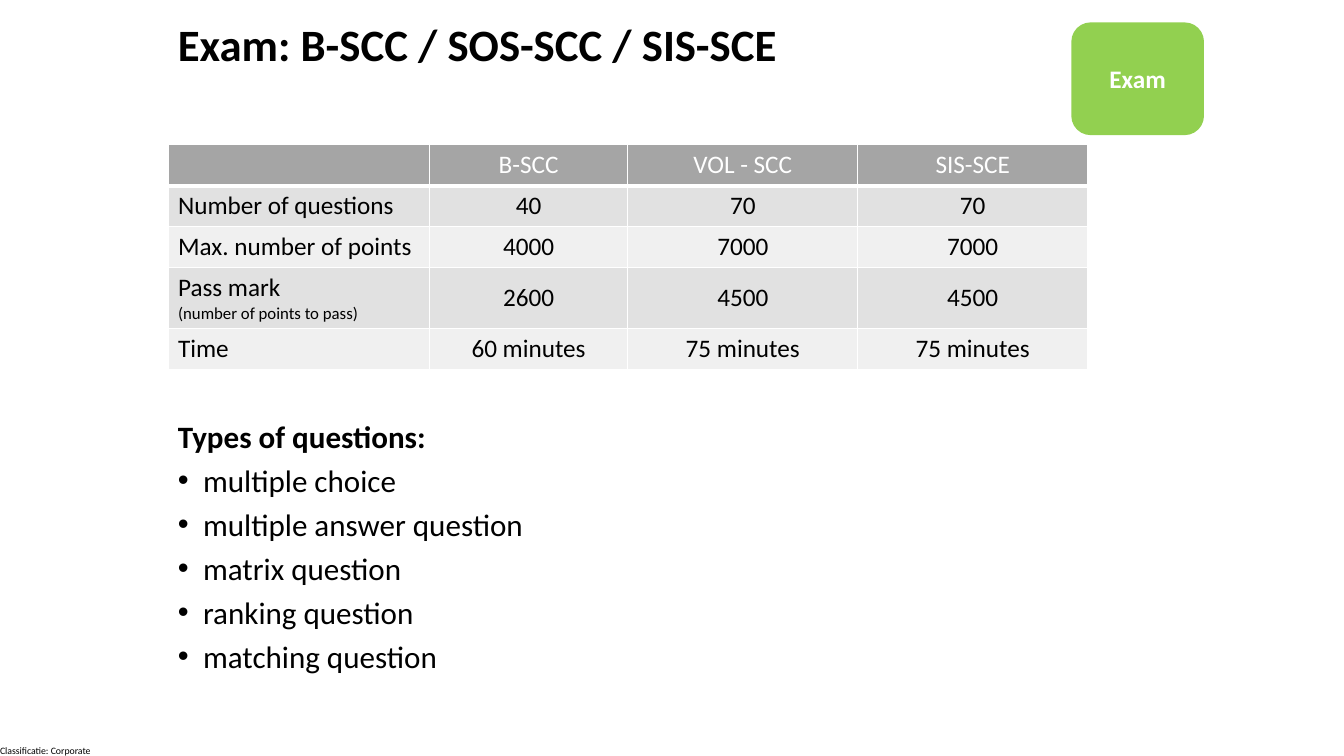
import dataclasses

import lxml.etree
import pptx
import pptx.dml.color
import pptx.enum.shapes
import pptx.enum.text
import pptx.oxml.ns
import pptx.util

ALIGN = pptx.enum.text.PP_ALIGN
ANCHOR = pptx.enum.text.MSO_ANCHOR


@dataclasses.dataclass(frozen=True)
class Theme:
    font: str = "Calibri"
    black: str = "000000"
    white: str = "FFFFFF"
    green: str = "92D050"
    header: str = "A5A5A5"
    bands: tuple = ("E1E1E1", "F0F0F0")
    title_size: float = 32
    list_size: float = 22.2
    table_size: float = 18
    note_size: float = 12
    footer_size: float = 7


THEME = Theme()
EXAM_ROWS = [
    ("", "B-SCC", "VOL - SCC", "SIS-SCE"),
    ("Number of questions", "40", "70", "70"),
    ("Max. number of points", "4000", "7000", "7000"),
    ("Pass mark\n(number of points to pass)", "2600", "4500", "4500"),
    ("Time", "60 minutes", "75 minutes", "75 minutes"),
]
COLUMN_WIDTHS = [249, 189, 219, 219]
ROW_HEIGHTS = [39, 39, 39, 58, 39]
QUESTION_TYPES = [
    "multiple choice",
    "multiple answer question",
    "matrix question",
    "ranking question",
    "matching question",
]


def px(length):
    return pptx.util.Emu(length * 9525)


def rgb(color):
    return pptx.dml.color.RGBColor.from_string(color)


def add_element(parent, tag, **attributes):
    element = lxml.etree.SubElement(parent, pptx.oxml.ns.qn(tag))
    for name, value in attributes.items():
        element.set(name, str(value))
    return element


def write_text(paragraph, text, size, color=THEME.black, bold=False,
               align=ALIGN.LEFT, line_spacing=None, space_before=0, bullet=False):
    if bullet:
        properties = paragraph._p.get_or_add_pPr()
        properties.set("marL", str(px(24)))
        properties.set("indent", str(px(-24)))
        add_element(properties, "a:buFont", typeface="Arial")
        add_element(properties, "a:buChar", char="•")
    paragraph.alignment = align
    paragraph.space_before = pptx.util.Pt(space_before)
    if line_spacing:
        paragraph.line_spacing = line_spacing
    run = paragraph.add_run()
    run.text = text
    run.font.name = THEME.font
    run.font.size = pptx.util.Pt(size)
    run.font.bold = bold
    run.font.color.rgb = rgb(color)


def add_text_frame(slide, left, top, width, height):
    frame = slide.shapes.add_textbox(px(left), px(top), px(width), px(height)).text_frame
    frame.word_wrap = True
    return frame


def add_title(slide, left, top, width, height):
    frame = add_text_frame(slide, left, top, width, height)
    write_text(frame.paragraphs[0], "Exam: B-SCC / SOS-SCC / SIS-SCE",
               THEME.title_size, bold=True, line_spacing=0.9)


def add_badge(slide, left, top, width, height):
    badge = slide.shapes.add_shape(
        pptx.enum.shapes.MSO_SHAPE.ROUNDED_RECTANGLE,
        px(left), px(top), px(width), px(height))
    badge.shadow.inherit = False
    badge.fill.solid()
    badge.fill.fore_color.rgb = rgb(THEME.green)
    badge.line.color.rgb = rgb(THEME.green)
    badge.line.width = pptx.util.Pt(1)
    badge.text_frame.vertical_anchor = ANCHOR.MIDDLE
    write_text(badge.text_frame.paragraphs[0], "Exam", THEME.table_size,
               THEME.white, bold=True, align=ALIGN.CENTER)


def format_cell(cell, fill, bottom_width):
    properties = cell._tc.get_or_add_tcPr()
    for side, width in (("L", 1), ("R", 1), ("T", 1), ("B", bottom_width)):
        border = add_element(properties, f"a:ln{side}", w=pptx.util.Pt(width))
        add_element(add_element(border, "a:solidFill"), "a:srgbClr", val=THEME.white)
    cell.fill.solid()
    cell.fill.fore_color.rgb = rgb(fill)


def add_exam_table(slide, left, top):
    table = slide.shapes.add_table(
        len(EXAM_ROWS), len(COLUMN_WIDTHS), px(left), px(top),
        px(sum(COLUMN_WIDTHS)), px(sum(ROW_HEIGHTS))).table
    for column, width in zip(table.columns, COLUMN_WIDTHS):
        column.width = px(width)
    for row, height in zip(table.rows, ROW_HEIGHTS):
        row.height = px(height)
    for row_index, values in enumerate(EXAM_ROWS):
        is_header = row_index == 0
        fill = THEME.header if is_header else THEME.bands[(row_index - 1) % 2]
        color = THEME.white if is_header else THEME.black
        for column_index, value in enumerate(values):
            cell = table.cell(row_index, column_index)
            format_cell(cell, fill, 3 if is_header else 1)
            cell.vertical_anchor = ANCHOR.TOP if is_header else ANCHOR.MIDDLE
            align = ALIGN.CENTER if column_index else ALIGN.LEFT
            frame = cell.text_frame
            for line_index, line in enumerate(value.split("\n")):
                paragraph = frame.add_paragraph() if line_index else frame.paragraphs[0]
                size = THEME.note_size if line_index else THEME.table_size
                write_text(paragraph, line, size, color, align=align)


def add_question_types(slide, left, top, width, height):
    frame = add_text_frame(slide, left, top, width, height)
    write_text(frame.paragraphs[0], "Types of questions:", THEME.list_size,
               bold=True, line_spacing=0.8)
    for question_type in QUESTION_TYPES:
        write_text(frame.add_paragraph(), question_type, THEME.list_size,
                   line_spacing=0.8, space_before=10, bullet=True)


def add_footer(slide, left, top, width, height):
    frame = add_text_frame(slide, left, top, width, height)
    frame.margin_left = frame.margin_right = frame.margin_top = frame.margin_bottom = 0
    frame.word_wrap = False
    write_text(frame.paragraphs[0], "Classificatie: Corporate", THEME.footer_size)


def main():
    presentation = pptx.Presentation()
    presentation.slide_width = px(1280)
    presentation.slide_height = px(720)
    slide = presentation.slides.add_slide(presentation.slide_layouts[6])
    add_footer(slide, 0, 709, 90, 11)
    add_title(slide, 160, 17, 864, 120)
    add_question_types(slide, 160, 400, 864, 249)
    add_badge(slide, 1021, 22, 125, 106)
    add_exam_table(slide, 160, 138)
    presentation.save("out.pptx")


if __name__ == "__main__":
    main()
